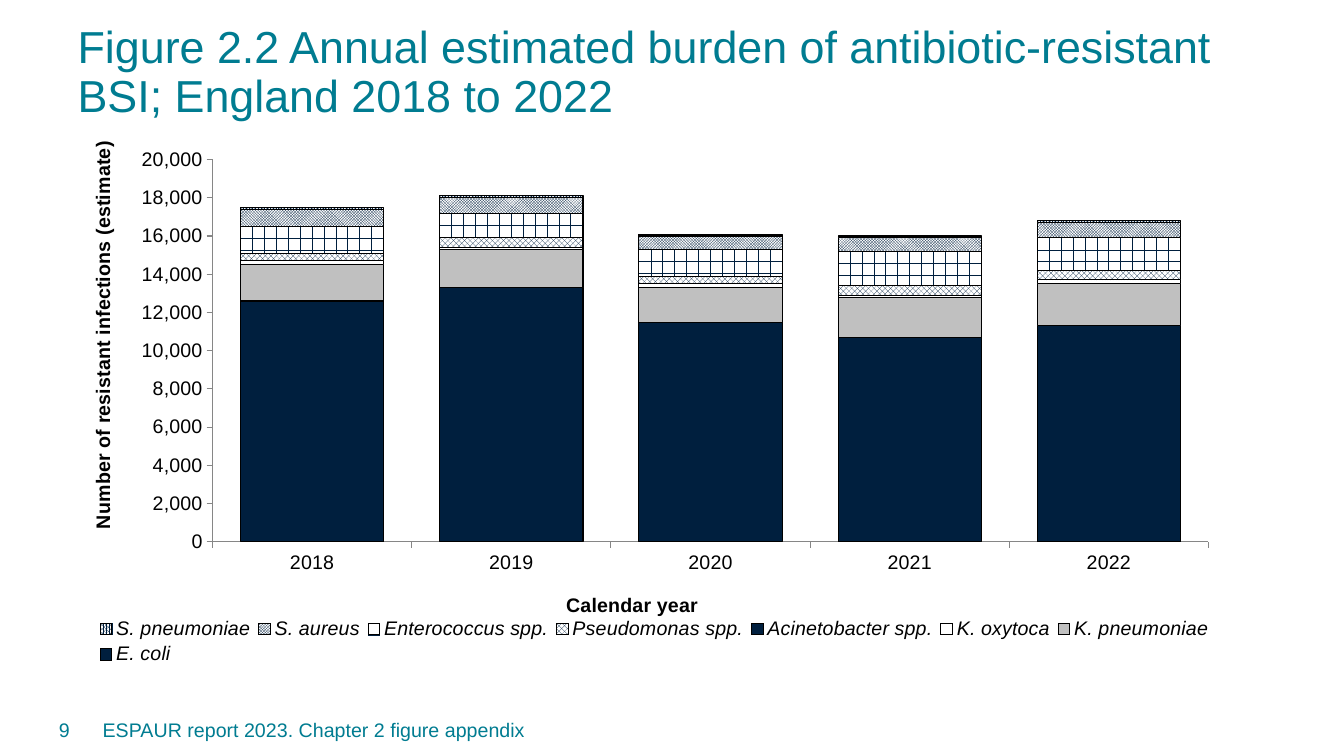
"""Build a slide with a stacked column chart of resistant infections by year."""
from lxml.etree import SubElement
from pptx import Presentation
from pptx.chart.data import CategoryChartData
from pptx.dml.color import RGBColor
from pptx.enum.chart import XL_CHART_TYPE, XL_LEGEND_POSITION, XL_TICK_MARK
from pptx.enum.dml import MSO_PATTERN
from pptx.enum.text import MSO_ANCHOR, PP_ALIGN
from pptx.oxml import parse_xml
from pptx.oxml.ns import nsdecls, qn
from pptx.util import Inches, Pt

TEAL = RGBColor(0x00, 0x7C, 0x91)
NAVY = RGBColor(0x00, 0x1F, 0x3E)
SILVER = RGBColor(0xC0, 0xC0, 0xC0)
GREY = RGBColor(0x86, 0x86, 0x86)
WHITE = RGBColor(0xFF, 0xFF, 0xFF)
BLACK = RGBColor(0x00, 0x00, 0x00)
FONT = "Arial"
YEARS = ["2018", "2019", "2020", "2021", "2022"]
SERIES = [
    ("E. coli", (12600, 13300, 11500, 10700, 11300), NAVY),
    ("K. pneumoniae", (1900, 2000, 1800, 2100, 2200), SILVER),
    ("K. oxytoca", (200, 100, 200, 100, 200), WHITE),
    ("Acinetobacter spp.", (0, 0, 0, 0, 0), MSO_PATTERN.DARK_VERTICAL),
    ("Pseudomonas spp.", (400, 500, 400, 500, 500), MSO_PATTERN.LARGE_CHECKER_BOARD),
    ("Enterococcus spp.", (1400, 1300, 1400, 1800, 1700), MSO_PATTERN.HORIZONTAL_BRICK),
    ("S. aureus", (900, 800, 700, 700, 800), MSO_PATTERN.SMALL_CHECKER_BOARD),
    ("S. pneumoniae", (100, 100, 100, 100, 100), MSO_PATTERN.PERCENT_80),
]


def style(font, size, color, bold=False, italic=False):
    """Set the face, size, colour and weight of a font."""
    font.name = FONT
    font.size = Pt(size)
    font.color.rgb = color
    font.bold = bold
    font.italic = italic


def place(shape, left, top, width, height):
    """Move and size a shape, in inches."""
    shape.left, shape.top = Inches(left), Inches(top)
    shape.width, shape.height = Inches(width), Inches(height)


def write(frame, text, size, color, bold=False):
    """Add one styled run to the first paragraph and return the paragraph."""
    para = frame.paragraphs[0]
    run = para.add_run()
    run.text = text
    style(run.font, size, color, bold)
    return para


def add_title(slide, text):
    """Fill and place the title placeholder."""
    title = slide.shapes.title
    place(title, 0.67, 0.2, 12.17, 1.06)
    title.text_frame.vertical_anchor = MSO_ANCHOR.MIDDLE
    para = write(title.text_frame, text, 32, TEAL)
    para.alignment = PP_ALIGN.LEFT
    para.line_spacing = 0.9


def add_note(slide, text, left, width, align):
    """Add a line of text at the foot of the slide."""
    box = slide.shapes.add_textbox(Inches(left), Inches(7.04), Inches(width), Inches(0.4))
    box.text_frame.word_wrap = True
    box.text_frame.vertical_anchor = MSO_ANCHOR.MIDDLE
    write(box.text_frame, text, 14, TEAL).alignment = align


def set_layout(part, inner=False, **sizes):
    """Give a chart part a manual layout as fractions of the chart."""
    for old in part.findall(qn("c:layout")):
        part.remove(old)
    layout = parse_xml(f"<c:layout {nsdecls('c')}><c:manualLayout/></c:layout>")
    manual = layout[0]
    if inner:
        SubElement(manual, qn("c:layoutTarget")).set("val", "inner")
    for key in ("x", "y"):
        SubElement(manual, qn(f"c:{key}Mode")).set("val", "edge")
    for key, size in sizes.items():
        SubElement(manual, qn(f"c:{key}")).set("val", str(size))
    after = part.find(qn("c:overlay"))
    if after is None:
        part.insert(0, layout)
    else:
        after.addprevious(layout)


def set_axis(axis, text, left, top):
    """Style an axis and give it a placed title."""
    axis.has_major_gridlines = False
    axis.major_tick_mark = XL_TICK_MARK.OUTSIDE
    axis.minor_tick_mark = XL_TICK_MARK.NONE
    axis.format.line.color.rgb = GREY
    axis.format.line.width = Pt(0.75)
    style(axis.tick_labels.font, 14, BLACK)
    write(axis.axis_title.text_frame, text, 14, BLACK, bold=True)
    set_layout(axis.axis_title._element, x=left, y=top)


def paint(series, look):
    """Fill a series with a colour or a pattern and outline it."""
    fill = series.format.fill
    if isinstance(look, RGBColor):
        fill.solid()
        fill.fore_color.rgb = look
    else:
        fill.patterned()
        fill.pattern = look
        fill.fore_color.rgb = NAVY
        fill.back_color.rgb = WHITE
    series.invert_if_negative = False
    series.format.line.color.rgb = BLACK
    series.format.line.width = Pt(0.75)


def add_legend(chart):
    """Add the italic legend below the plot."""
    chart.has_legend = True
    legend = chart.legend
    legend.position = XL_LEGEND_POSITION.RIGHT
    legend.include_in_layout = False
    style(legend.font, 14, BLACK, italic=True)
    set_layout(legend._element, x=0.01, y=0.9, w=0.98, h=0.1)


def add_columns(slide):
    """Add the stacked column chart."""
    data = CategoryChartData(number_format="#,##0")
    data.categories = YEARS
    for name, values, _ in SERIES:
        data.add_series(name, values)
    frame = slide.shapes.add_chart(
        XL_CHART_TYPE.COLUMN_STACKED, Inches(0.8), Inches(1.34),
        Inches(11.38), Inches(5.29), data)
    chart = frame.chart
    chart.has_title = False
    style(chart.font, 12, BLACK)
    plot = chart.plots[0]
    plot.gap_width, plot.overlap, plot.vary_by_categories = 39, 100, False
    for series, (_, _, look) in zip(plot.series, SERIES):
        paint(series, look)
    set_axis(chart.category_axis, "Calendar year", 0.42, 0.85)
    scale = chart.value_axis
    set_axis(scale, "Number of resistant infections (estimate)", 0.005, 0.005)
    scale.minimum_scale, scale.maximum_scale, scale.major_unit = 0, 20000, 2000
    scale.tick_labels.number_format = "#,##0"
    scale.tick_labels.number_format_is_linked = False
    body = scale.axis_title.text_frame._txBody.find(qn("a:bodyPr"))
    body.set("rot", "-5400000")
    body.set("vert", "horz")
    add_legend(chart)
    area = chart._chartSpace.chart.plotArea
    set_layout(area, inner=True, x=0.115, y=0.046, w=0.868, h=0.717)


def main():
    """Build and save the slide."""
    deck = Presentation()
    deck.slide_width, deck.slide_height = Inches(13.33), Inches(7.5)
    slide = deck.slides.add_slide(deck.slide_layouts[5])
    add_title(slide, "Figure 2.2 Annual estimated burden of antibiotic-resistant "
                     "BSI; England 2018 to 2022")
    add_columns(slide)
    add_note(slide, "ESPAUR report 2023. Chapter 2 figure appendix", 0.92, 10.94, PP_ALIGN.LEFT)
    add_note(slide, "9", 0.14, 0.65, PP_ALIGN.RIGHT)
    deck.save("out.pptx")


if __name__ == "__main__":
    main()
